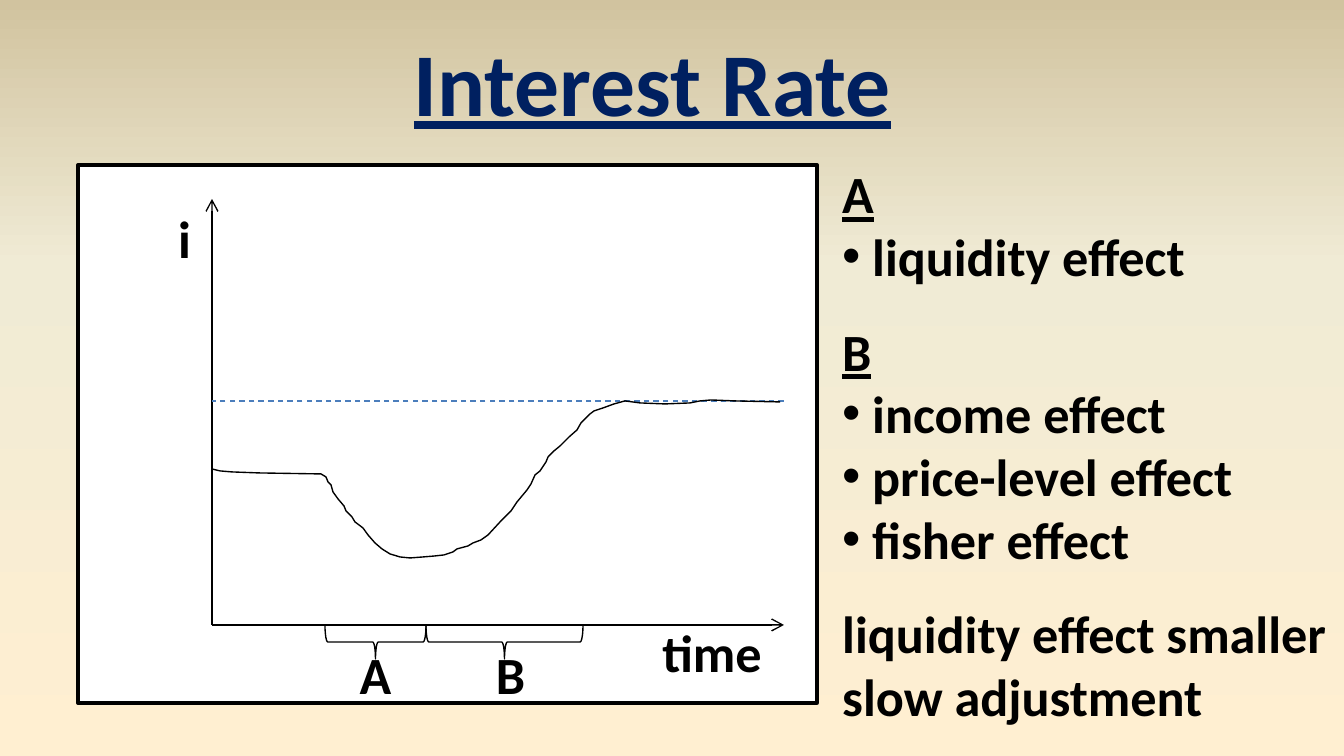
import copy
from dataclasses import dataclass

import pptx
import pptx.dml.color
import pptx.enum.dml
import pptx.enum.shapes
import pptx.enum.text
import pptx.oxml
import pptx.oxml.ns
import pptx.util

RGB = pptx.dml.color.RGBColor
Align = pptx.enum.text.PP_ALIGN
Preset = pptx.enum.shapes.MSO_SHAPE

BLACK = RGB(0, 0, 0)
WHITE = RGB(255, 255, 255)
NAVY = RGB(0x00, 0x20, 0x60)
BLUE = RGB(0x4B, 0x7E, 0xBC)
SKY = [
    (0, RGB(0xFF, 0xEF, 0xD1)),
    (0.65, RGB(0xF0, 0xEB, 0xD5)),
    (1, RGB(0xD1, 0xC3, 0x9F)),
]
PX = 914400 / 134.4
FONT = "Calibri"
NS = 'xmlns:a="http://schemas.openxmlformats.org/drawingml/2006/main"'

LEFT, RIGHT, BASE, TOP, LEVEL = 212, 784, 625, 199, 401
CURVE = [
    (212, 469), (220, 471), (232, 472), (259, 473), (321, 474), (326, 477),
    (328, 482), (331, 485), (333, 492), (338, 499), (344, 506), (346, 511),
    (352, 517), (355, 522), (363, 528), (368, 535), (375, 543), (382, 549),
    (390, 554), (400, 557), (410, 558), (423, 557), (435, 556), (444, 555),
    (453, 552), (457, 549), (468, 546), (473, 543), (481, 540), (488, 535),
    (500, 522), (504, 518), (511, 511), (517, 502), (522, 496), (527, 490),
    (531, 484), (535, 475), (540, 471), (546, 462), (548, 457), (554, 451),
    (560, 446), (569, 437), (577, 430), (581, 423), (586, 418), (590, 414),
    (594, 411), (603, 408), (614, 404), (625, 401), (640, 403), (665, 404),
    (690, 403), (700, 401), (711, 400), (735, 401), (780, 402),
]


@dataclass
class Label:
    text: str
    x: int
    y: int
    w: int
    h: int = 77
    size: int = 28
    color: RGB = BLACK
    line: bool = False


@dataclass
class Ray:
    x: int
    y: int
    color: RGB = BLACK
    start: tuple[int, int] = (LEFT, BASE)
    arrow: bool = True


@dataclass
class Item:
    text: str
    head: bool = False
    bullet: bool = False
    gap: int = 0


LABELS = [
    Label("i", 134, 200, 101),
    Label("time", 628, 614, 168),
    Label("A", 325, 636, 101),
    Label("B", 460, 636, 101),
]
RAYS = [
    Ray(LEFT, TOP),
    Ray(RIGHT, BASE),
    Ray(LEFT, LEVEL, BLUE, (RIGHT, LEVEL), False),
]
SPANS = [(325, 426), (426, 583)]
ITEMS = [
    Item("A", head=True),
    Item("liquidity effect", bullet=True),
    Item("B", head=True, gap=17),
    Item("income effect", bullet=True),
    Item("price-level effect", bullet=True),
    Item("fisher effect", bullet=True),
    Item("liquidity effect smaller", gap=17),
    Item("slow adjustment"),
]


def emu(*vals: float) -> list[int]:
    return [round(v * PX) for v in vals]


def style(para, size: int, color: RGB, line: bool) -> None:
    for run in para.runs:
        font = run.font
        font.name, font.size, font.bold = FONT, pptx.util.Pt(size), True
        font.color.rgb, font.underline = color, line


def stroke(shape, width: float = 0.75, color: RGB = BLACK) -> None:
    shape.line.color.rgb = color
    shape.line.width = pptx.util.Pt(width)


def outline(shape, width: float = 0.75) -> None:
    """Give a shape a black line, no fill and no shadow."""
    shape.shadow.inherit = False
    shape.fill.background()
    stroke(shape, width)


def write(shapes, label: Label) -> None:
    box = shapes.add_textbox(*emu(label.x, label.y, label.w, label.h))
    frame = box.text_frame
    frame.word_wrap = True
    frame.text = label.text
    para = frame.paragraphs[0]
    para.alignment = Align.CENTER
    style(para, label.size, label.color, label.line)


def draw_ray(shapes, ray: Ray) -> None:
    kind = pptx.enum.shapes.MSO_CONNECTOR.STRAIGHT
    link = shapes.add_connector(kind, *emu(*ray.start, ray.x, ray.y))
    stroke(link, color=ray.color)
    if ray.arrow:
        tail = pptx.oxml.parse_xml(f'<a:tailEnd {NS} type="arrow"/>')
        link.line._get_or_add_ln().append(tail)
    else:
        link.line.dash_style = pptx.enum.dml.MSO_LINE.DASH
    link._element.spPr.append(pptx.oxml.parse_xml(f"<a:effectLst {NS}/>"))


def draw_brace(shapes, left: int, right: int) -> None:
    """Turn a left brace so that it hangs under the time axis."""
    deep, wide = 34, right - left
    x = (left + right - deep) / 2
    y = BASE + (deep - wide) / 2
    brace = shapes.add_shape(Preset.LEFT_BRACE, *emu(x, y, deep, wide))
    brace.rotation = 270
    outline(brace)


def draw_graph(shapes) -> None:
    panel = shapes.add_shape(Preset.RECTANGLE, *emu(78, 165, 739, 538))
    outline(panel, 2)
    panel.fill.solid()
    panel.fill.fore_color.rgb = WHITE
    for ray in RAYS:
        draw_ray(shapes, ray)
    pen = shapes.build_freeform(*CURVE[0], scale=PX)
    pen.add_line_segments(CURVE[1:], close=False)
    outline(pen.convert_to_shape())
    for span in SPANS:
        draw_brace(shapes, *span)
    for label in LABELS:
        write(shapes, label)


def draw_list(shapes) -> None:
    frame = shapes.add_textbox(*emu(829, 155, 515, 583)).text_frame
    frame.word_wrap = True
    for num, item in enumerate(ITEMS):
        para = frame.add_paragraph() if num else frame.paragraphs[0]
        para.text = item.text
        para.space_before = pptx.util.Pt(item.gap)
        style(para, 28, BLACK, item.head)
        if item.bullet:
            props = para._p.get_or_add_pPr()
            indent = emu(30)[0]
            props.set("marL", str(indent))
            props.set("indent", str(-indent))
            for tag in ('buFont {} typeface="Arial"', 'buChar {} char="•"'):
                props.append(pptx.oxml.parse_xml(f"<a:{tag.format(NS)}/>"))


def paint(slide) -> None:
    """Fill the background with the three-stop gradient."""
    fill = slide.background.fill
    fill.gradient()
    fill.gradient_angle = 90
    stops = slide.element.find(".//" + pptx.oxml.ns.qn("a:gsLst"))
    stops.append(copy.deepcopy(stops[0]))
    for stop, (pos, color) in zip(fill.gradient_stops, SKY):
        stop.position = pos
        stop.color.rgb = color


def main() -> None:
    deck = pptx.Presentation()
    deck.slide_width, deck.slide_height = emu(1344, 756)
    slide = deck.slides.add_slide(deck.slide_layouts[6])
    paint(slide)
    draw_graph(slide.shapes.add_group_shape().shapes)
    write(slide.shapes, Label("Interest Rate", 398, 20, 509, 122, 48, NAVY, True))
    draw_list(slide.shapes)
    deck.save("out.pptx")


if __name__ == "__main__":
    main()
